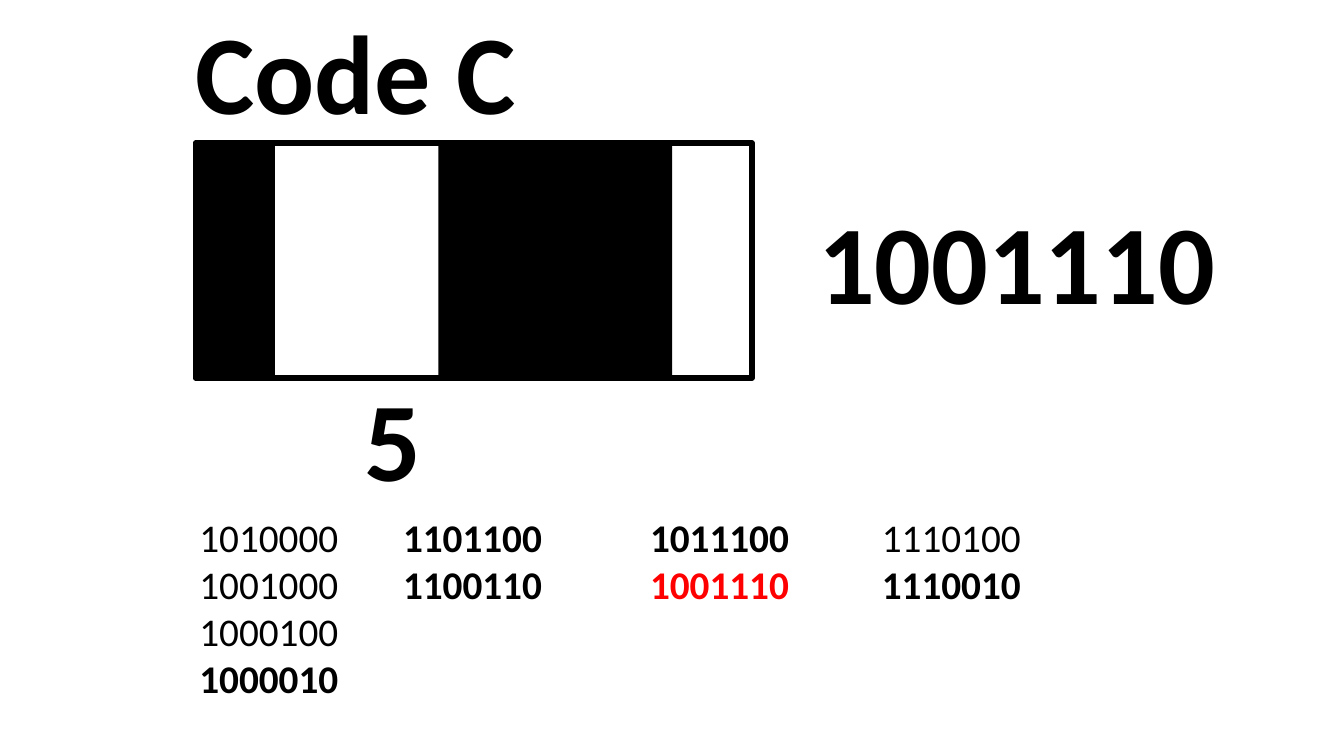
import pptx
import pptx.dml.color
import pptx.enum.shapes
import pptx.util

THEME = {
    "font": "Calibri",
    "ink": pptx.dml.color.RGBColor(0, 0, 0),
    "match": pptx.dml.color.RGBColor(255, 0, 0),
    "display": pptx.util.Pt(80),
    "list": pptx.util.Pt(28),
    "frame": pptx.util.Pt(4),
}
STYLES = {
    "plain": {"bold": False, "color": THEME["ink"]},
    "bold": {"bold": True, "color": THEME["ink"]},
    "match": {"bold": True, "color": THEME["match"]},
}

deck = pptx.Presentation()
deck.slide_width = pptx.util.Inches(13.333)
deck.slide_height = pptx.util.Inches(7.5)
slide = deck.slides.add_slide(deck.slide_layouts[6])


def place(left, top, width, height):
    """Turn percentages of the slide's size into lengths."""
    return (
        int(deck.slide_width * left / 100),
        int(deck.slide_height * top / 100),
        int(deck.slide_width * width / 100),
        int(deck.slide_height * height / 100),
    )


def add_lines(box, lines, size):
    """Add a text box with one paragraph for each (text, style) pair."""
    frame = slide.shapes.add_textbox(*place(*box)).text_frame
    frame.word_wrap = True
    for number, (text, style) in enumerate(lines):
        paragraph = frame.add_paragraph() if number else frame.paragraphs[0]
        run = paragraph.add_run()
        run.text = text
        look = STYLES[style]
        font_format = {"name": THEME["font"], "size": size, "bold": look["bold"]}
        for key, value in font_format.items():
            setattr(run.font, key, value)
        run.font.color.rgb = look["color"]


# Barcode: an outlined strip seven modules wide, with the dark modules filled
strip_left, strip_top, strip_width, strip_height = 14.55, 18.93, 41.4, 31.07
module_width = strip_width / 7
rectangle = pptx.enum.shapes.MSO_SHAPE.RECTANGLE

strip = slide.shapes.add_shape(
    rectangle, *place(strip_left, strip_top, strip_width, strip_height))
strip.shadow.inherit = False
strip.fill.background()
strip.line.color.rgb = THEME["ink"]
strip.line.width = THEME["frame"]

for module_left in (strip_left, 32.62, 38.36, 44.1):
    module = slide.shapes.add_shape(
        rectangle, *place(module_left, strip_top, module_width, strip_height))
    module.shadow.inherit = False
    module.fill.solid()
    module.fill.fore_color.rgb = THEME["ink"]
    module.line.fill.background()

# Digit, title and bit pattern
for text, left, top, width in (
    ("5", 26.4, 48.27, 7.5),
    ("Code C", 13.8, -0.27, 42.15),
    ("1001110", 60.15, 24.8, 32.25),
):
    add_lines((left, top, width, 19.33), [(text, "bold")], THEME["display"])

# Candidate codes in columns
code_columns = {
    14.1: [("1010000", "plain"), ("1001000", "plain"),
           ("1000100", "plain"), ("1000010", "bold")],
    29.25: [("1101100", "bold"), ("1100110", "bold")],
    47.63: [("1011100", "bold"), ("1001110", "match")],
    64.88: [("1110100", "plain"), ("1110010", "bold")],
}
codes_top, codes_width, line_height, padding = 67.2, 17.03, 6.33, 1.2
for left, codes in code_columns.items():
    height = padding + line_height * len(codes)
    add_lines((left, codes_top, codes_width, height), codes, THEME["list"])

deck.save("out.pptx")
